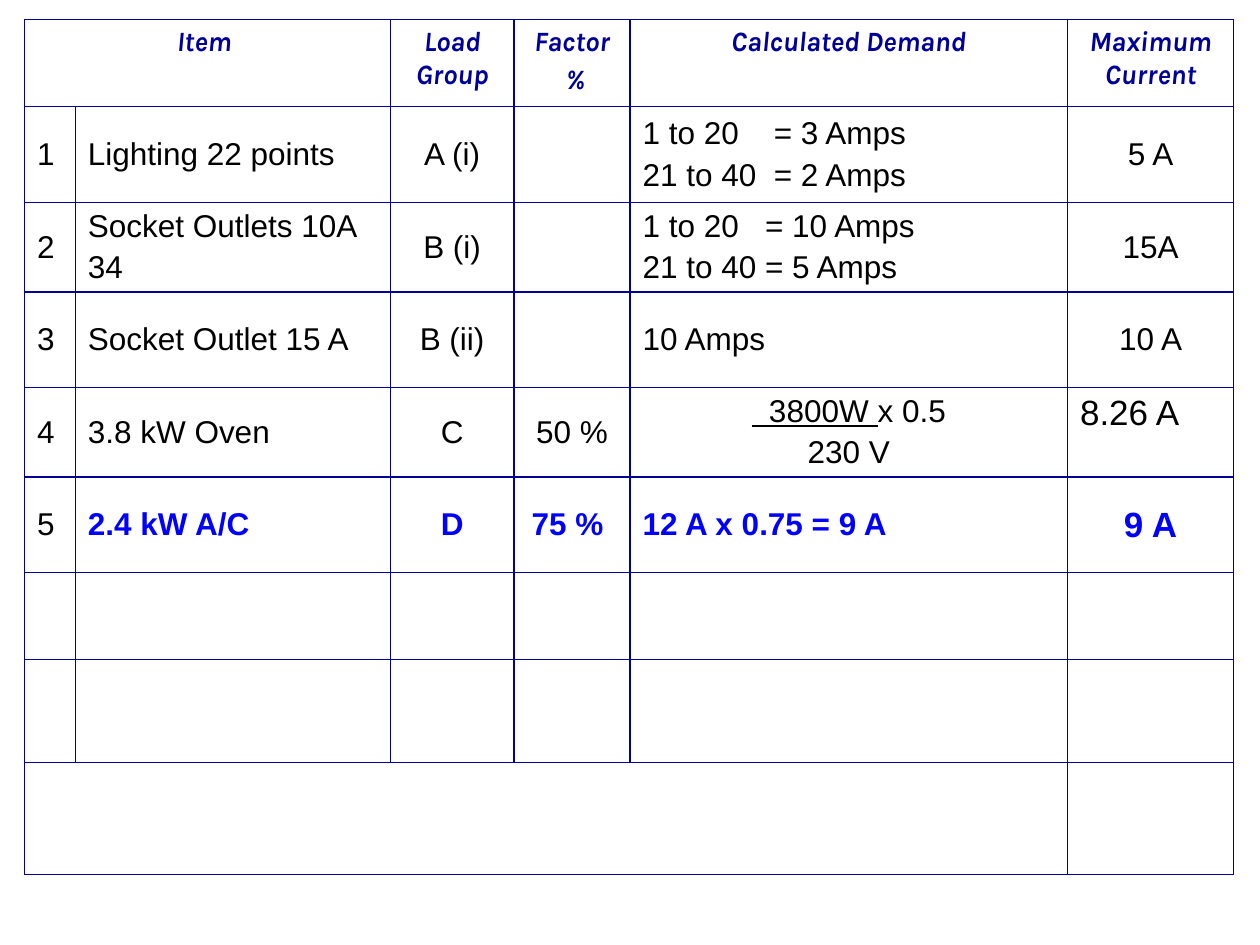
from lxml import etree
from pptx import Presentation
from pptx.dml.color import RGBColor
from pptx.enum.text import MSO_ANCHOR, PP_ALIGN
from pptx.oxml.ns import qn
from pptx.util import Pt

LEFT, CENTER = PP_ALIGN.LEFT, PP_ALIGN.CENTER
TOP, MIDDLE = MSO_ANCHOR.TOP, MSO_ANCHOR.MIDDLE
COLORS = {"border": "010199", "header": "000099", "body": "000000", "highlight": "0000FF"}

# Content: cells hold lines separated by a newline
HEADER = ["Item ", "", "Load Group", "Factor\n %", "Calculated Demand", "Maximum Current"]
LOADS = [
    ["1", "Lighting 22 points", "A (i)", "", "1 to 20    = 3 Amps\n21 to 40  = 2 Amps", "5 A"],
    ["2", "Socket Outlets 10A\n34", "B (i)", "", "1 to 20   = 10 Amps\n21 to 40 = 5 Amps", "15A"],
    ["3", "Socket Outlet 15 A", "B (ii)", "", "10 Amps", "10 A"],
    ["4", "3.8 kW Oven", "C", "50 %", "  3800W x 0.5\n230 V", "8.26 A"],
    ["5", "2.4 kW A/C", "D", "75 % ", "12 A x 0.75 = 9 A", "9 A"],
]
NUMERATOR = "  3800W "
OVEN, AIRCON = 4, 5
DEMAND, CURRENT = 4, 5

# Geometry in points
COLUMN_WIDTHS = [29, 180, 70.75, 66.25, 250, 95]
ROW_HEIGHTS = [49.7, 54.7, 49.7, 54.7, 49.7, 54.7, 49.7, 58.7, 64]
COLUMN_ALIGN = [LEFT, LEFT, CENTER, CENTER, LEFT, CENTER]


def set_borders(cell):
    properties = cell._tc.get_or_add_tcPr()
    for side in ("lnL", "lnR", "lnT", "lnB"):
        line = etree.SubElement(properties, qn(f"a:{side}"), w=str(Pt(1)))
        fill = etree.SubElement(line, qn("a:solidFill"))
        etree.SubElement(fill, qn("a:srgbClr"), val=COLORS["border"])


def set_space_before(para, percent):
    space = etree.Element(qn("a:spcBef"))
    etree.SubElement(space, qn("a:spcPct"), val=str(percent * 1000))
    para._p.get_or_add_pPr().insert(0, space)


def write_cell(cell, text, align, anchor, size, color, font="Arial", bold=False, italic=False):
    cell.vertical_anchor = anchor
    cell.text_frame.text = text
    for para in cell.text_frame.paragraphs:
        para.alignment = align
        set_space_before(para, 20)
        if para.text.startswith(NUMERATOR):
            rest = para.text[len(NUMERATOR):]
            para.runs[0].text = NUMERATOR
            para.runs[0].font.underline = True
            para.add_run().text = rest
        for span in para.runs:
            span.font.name = font
            span.font.size = Pt(size)
            span.font.bold = bold
            span.font.italic = italic
            span.font.color.rgb = RGBColor.from_string(COLORS[color])


def main():
    deck = Presentation()
    deck.slide_width, deck.slide_height = Pt(720), Pt(540)
    page = deck.slides.add_slide(deck.slide_layouts[6])

    # Grid
    frame = page.shapes.add_table(
        len(ROW_HEIGHTS), len(COLUMN_WIDTHS), Pt(14), Pt(11.25),
        Pt(sum(COLUMN_WIDTHS)), Pt(sum(ROW_HEIGHTS)))
    table = frame.table
    table.first_row = table.horz_banding = False
    for column, width in zip(table.columns, COLUMN_WIDTHS):
        column.width = Pt(width)
    for row, height in zip(table.rows, ROW_HEIGHTS):
        row.height = Pt(height)
    for cell in table.iter_cells():
        set_borders(cell)
        cell.fill.background()
    table.cell(0, 0).merge(table.cell(0, 1))
    table.cell(8, 0).merge(table.cell(8, 4))

    # Header
    for index, text in enumerate(HEADER):
        if text:
            write_cell(table.cell(0, index), text, CENTER, TOP, 16, "header",
                       "Karla", bold=True, italic=True)

    # Loads
    for number, load in enumerate(LOADS, start=1):
        for index, text in enumerate(load):
            if not text:
                continue
            align, anchor = COLUMN_ALIGN[index], MIDDLE
            if number == OVEN and index == DEMAND:
                align, anchor = CENTER, TOP
            elif number == OVEN and index == CURRENT:
                align, anchor = LEFT, TOP
            size = 20 if index == CURRENT and number in (OVEN, AIRCON) else 18
            strong = number == AIRCON and index > 0
            write_cell(table.cell(number, index), text, align, anchor, size,
                       "highlight" if strong else "body", bold=strong)

    deck.save("out.pptx")


if __name__ == "__main__":
    main()
